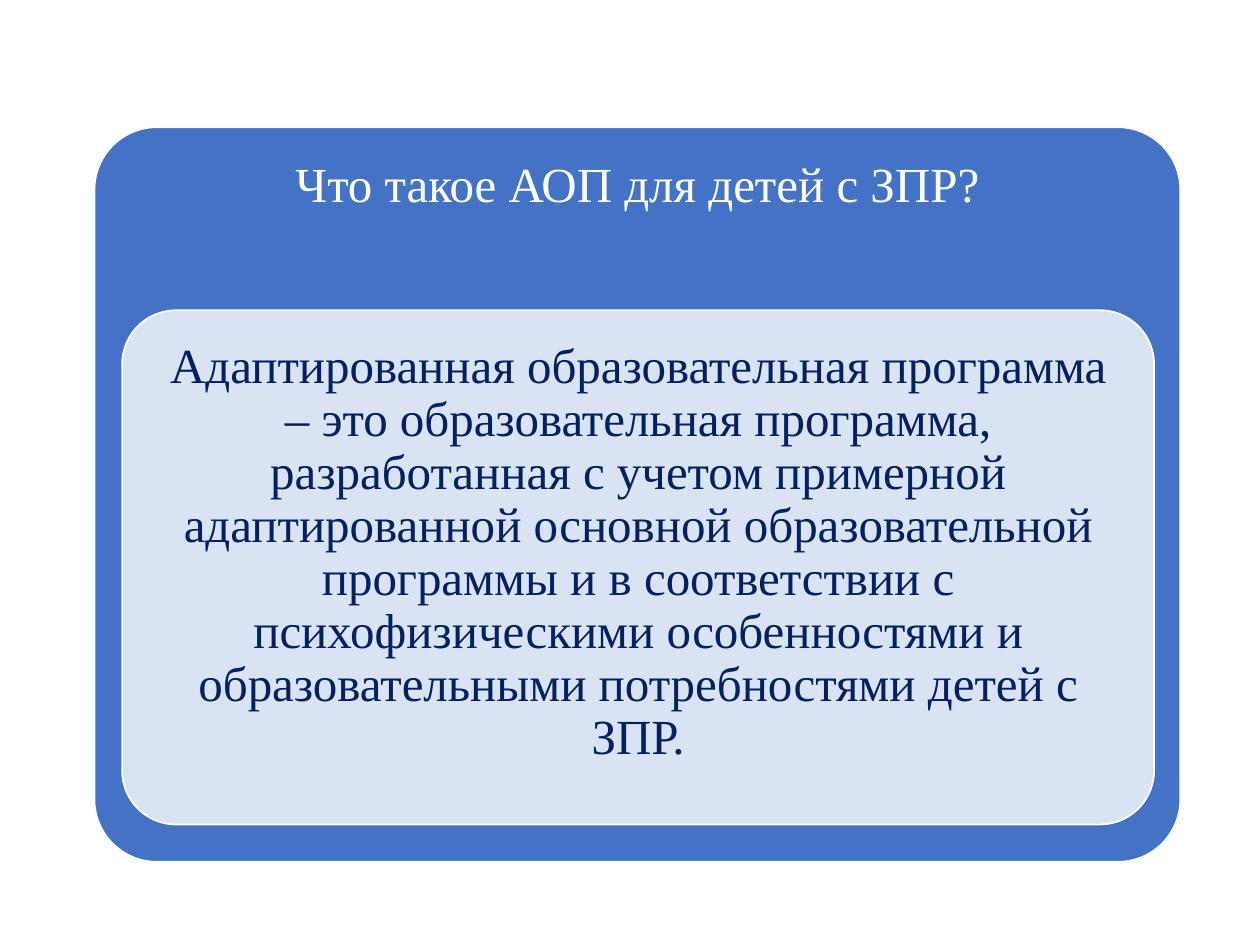
from dataclasses import dataclass
from math import sqrt

from pptx import Presentation
from pptx.dml.color import RGBColor
from pptx.enum.shapes import MSO_SHAPE as Shape
from pptx.enum.text import MSO_ANCHOR as Anchor, PP_ALIGN as Align
from pptx.slide import Slide
from pptx.util import Pt

COLOURS = {
    "outer": "4472C4",
    "inner": "DAE3F3",
    "white": "FFFFFF",
    "navy": "002060",
}
FONT = "Times New Roman"
FONT_SIZE = 28
TEXT_MARGIN = 8.6


@dataclass
class Panel:
    left: float
    top: float
    width: float
    height: float
    rounding: float
    fill: str
    text: str
    text_colour: str

    @property
    def corner_inset(self) -> float:
        """Distance from the edge to the rectangle that clears the round corners."""
        return self.rounding * min(self.width, self.height) * (1 - 1 / sqrt(2))


PANELS = [
    Panel(54, 72.7, 620.5, 419.8, 0.085, "outer",
          "Что такое АОП для детей с ЗПР?", "white"),
    Panel(69.8, 177.3, 589.7, 293.8, 0.105, "inner",
          "Адаптированная образовательная программа – это образовательная "
          "программа, разработанная с учетом примерной адаптированной основной "
          "образовательной программы и в соответствии с психофизическими "
          "особенностями и образовательными потребностями детей с ЗПР.", "navy"),
]


def colour(name: str) -> RGBColor:
    return RGBColor.from_string(COLOURS[name])


def draw_card(slide: Slide, panel: Panel) -> None:
    card = slide.shapes.add_shape(
        Shape.ROUNDED_RECTANGLE,
        Pt(panel.left), Pt(panel.top), Pt(panel.width), Pt(panel.height))
    card.adjustments[0] = panel.rounding
    card.shadow.inherit = False
    card.fill.solid()
    card.fill.fore_color.rgb = colour(panel.fill)
    card.line.color.rgb = colour("white")
    card.line.width = Pt(1)


def draw_text(slide: Slide, panel: Panel) -> None:
    inset = panel.corner_inset
    caption = slide.shapes.add_textbox(
        Pt(panel.left + inset), Pt(panel.top + inset),
        Pt(panel.width - 2 * inset), Pt(panel.height - 2 * inset))
    frame = caption.text_frame
    frame.word_wrap = True
    frame.vertical_anchor = Anchor.TOP
    frame.margin_left = frame.margin_right = Pt(TEXT_MARGIN)
    frame.margin_top = frame.margin_bottom = Pt(TEXT_MARGIN)

    paragraph = frame.paragraphs[0]
    paragraph.alignment = Align.CENTER
    paragraph.line_spacing = 0.9
    paragraph.space_after = Pt(0.35 * FONT_SIZE)
    run = paragraph.add_run()
    run.text = panel.text
    run.font.name = FONT
    run.font.size = Pt(FONT_SIZE)
    run.font.color.rgb = colour(panel.text_colour)


def main() -> None:
    deck = Presentation()
    deck.slide_width, deck.slide_height = Pt(720), Pt(540)
    slide = deck.slides.add_slide(deck.slide_layouts[6])

    # Question panel behind, answer panel in front
    for panel in PANELS:
        draw_card(slide, panel)
        draw_text(slide, panel)

    deck.save("out.pptx")


if __name__ == "__main__":
    main()
